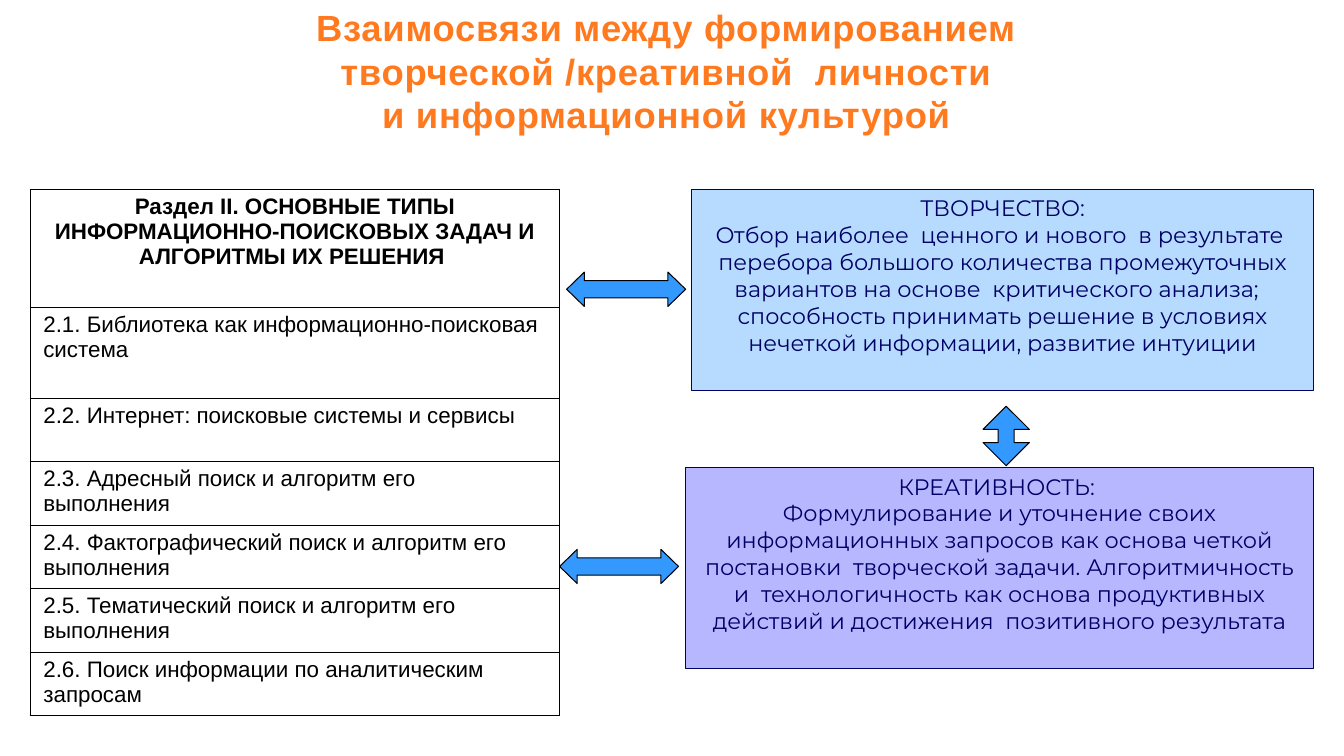
from lxml.etree import SubElement
from pptx import Presentation
from pptx.dml.color import RGBColor
from pptx.enum.shapes import MSO_SHAPE
from pptx.enum.text import MSO_ANCHOR, PP_ALIGN
from pptx.oxml.ns import qn
from pptx.util import Inches, Pt

COLORS = {
    "title": "FF7A1F", "black": "000000", "white": "FFFFFF", "navy": "000066",
    "sky": "99CCFF", "violet": "9999FF", "arrow": "3399FF",
}
TITLE = ("Взаимосвязи между формированием \vтворческой /креативной  личности "
         "\vи информационной культурой ")
TOPICS = [
    ("Раздел II. ОСНОВНЫЕ ТИПЫ ИНФОРМАЦИОННО-ПОИСКОВЫХ ЗАДАЧ И АЛГОРИТМЫ ИХ РЕШЕНИЯ ", 1.17),
    ("2.1. Библиотека как информационно-поисковая система", 0.9),
    ("2.2. Интернет: поисковые системы и сервисы", 0.63),
    ("2.3. Адресный поиск и алгоритм его выполнения", 0.63),
    ("2.4. Фактографический поиск и алгоритм его выполнения", 0.63),
    ("2.5. Тематический поиск и алгоритм его выполнения", 0.63),
    ("2.6. Поиск информации по аналитическим запросам", 0.63),
]
PANELS = [
    ((6.86, 1.88, 6.17, 1.99), "sky", [
        "ТВОРЧЕСТВО:",
        "Отбор наиболее  ценного и нового  в результате  перебора большого количества "
        "промежуточных вариантов на основе  критического анализа;  ",
        "способность принимать решение в условиях нечеткой информации, развитие интуиции",
    ]),
    ((6.8, 4.64, 6.23, 1.99), "violet", [
        "КРЕАТИВНОСТЬ: ",
        "Формулирование и уточнение своих информационных запросов как основа четкой "
        "постановки  творческой задачи. Алгоритмичность и  технологичность как основа "
        "продуктивных действий и достижения  позитивного результата",
    ]),
]
ARROWS = [
    (MSO_SHAPE.LEFT_RIGHT_ARROW, (5.62, 2.7, 1.18, 0.34), 0.515),
    (MSO_SHAPE.LEFT_RIGHT_ARROW, (5.55, 5.45, 1.18, 0.34), 0.515),
    (MSO_SHAPE.UP_DOWN_ARROW, (9.75, 4.03, 0.46, 0.59), 0.343),
]


def rgb(name):
    return RGBColor.from_string(COLORS[name])


def place(box):
    return [Inches(v) for v in box]


def write(frame, lines, size=16, font="Arial", color="black", bold=False,
          align=PP_ALIGN.CENTER, gap=None):
    frame.word_wrap = True
    for i, line in enumerate(lines):
        para = frame.add_paragraph() if i else frame.paragraphs[0]
        para.text = line
        para.alignment = align
        for run in para.runs:
            run.font.size = Pt(size)
            run.font.name = font
            run.font.bold = bold
            run.font.color.rgb = rgb(color)
            if gap:
                run.font._element.set("spc", str(gap))


def paint(fill, props, color, alpha=100):
    fill.solid()
    fill.fore_color.rgb = rgb(color)
    if alpha < 100:
        tone = list(props.iter(qn("a:srgbClr")))[-1]
        SubElement(tone, qn("a:alpha"), val=str(alpha * 1000))


def border(props):
    for side in ("lnL", "lnR", "lnT", "lnB"):
        line = SubElement(props, qn("a:" + side), w=str(Pt(1)))
        fill = SubElement(line, qn("a:solidFill"))
        SubElement(fill, qn("a:srgbClr"), val=COLORS["black"])


def draw(slide, kind, box, color, edge, alpha=100):
    shape = slide.shapes.add_shape(kind, *place(box))
    shape.shadow.inherit = False
    paint(shape.fill, shape._element.spPr, color, alpha)
    shape.line.color.rgb = rgb(edge)
    shape.line.width = Pt(0.75)
    return shape


def list_topics(slide):
    box = (0.3, 1.88, 5.25, sum(high for _, high in TOPICS))
    table = slide.shapes.add_table(len(TOPICS), 1, *place(box)).table
    table.first_row = table.horz_banding = False
    for i, (text, high) in enumerate(TOPICS):
        table.rows[i].height = Inches(high)
        cell = table.cell(i, 0)
        cell.margin_left = cell.margin_right = Inches(0.13)
        cell.margin_top = cell.margin_bottom = Inches(0.05)
        head = i == 0
        write(cell.text_frame, [text], bold=head,
              align=PP_ALIGN.CENTER if head else PP_ALIGN.LEFT)
        props = cell._tc.get_or_add_tcPr()
        border(props)
        paint(cell.fill, props, "white", 50)


def main():
    deck = Presentation()
    deck.slide_width, deck.slide_height = Inches(13.33), Inches(7.5)
    slide = deck.slides.add_slide(deck.slide_layouts[6])
    list_topics(slide)
    for box, color, lines in PANELS:
        panel = draw(slide, MSO_SHAPE.RECTANGLE, box, color, "navy", 70)
        panel.text_frame.vertical_anchor = MSO_ANCHOR.TOP
        write(panel.text_frame, lines, font="Montserrat", color="navy")
    for kind, box, head in ARROWS:
        arrow = draw(slide, kind, box, "arrow", "black")
        arrow.adjustments[0], arrow.adjustments[1] = 0.5, head
    title = slide.shapes.add_textbox(*place((0, 0, 13.33, 1.41)))
    write(title.text_frame, [TITLE], size=26, color="title", bold=True, gap=50)
    deck.save("out.pptx")


if __name__ == "__main__":
    main()
